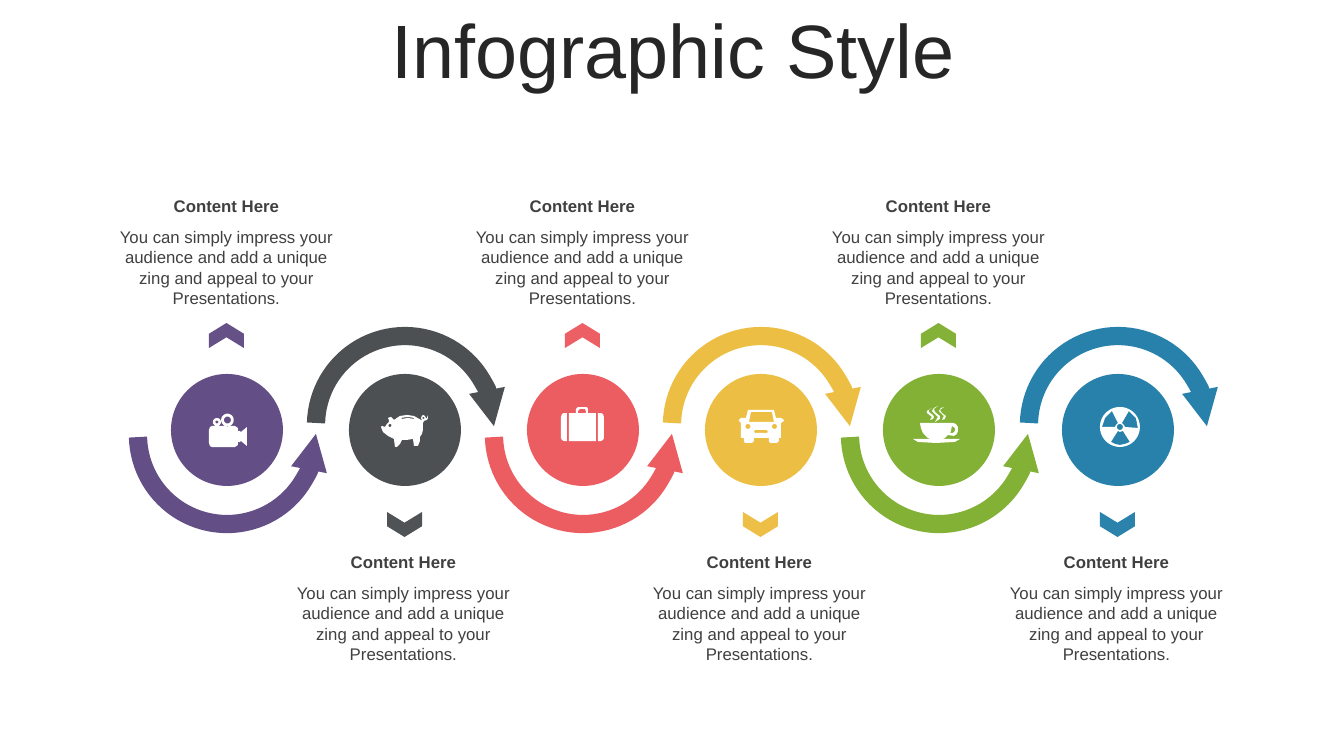
from math import cos, sin, tau

from lxml import etree
from pptx import Presentation
from pptx.dml.color import RGBColor
from pptx.enum.shapes import MSO_SHAPE
from pptx.enum.text import MSO_ANCHOR, MSO_AUTO_SIZE, PP_ALIGN
from pptx.oxml.ns import qn
from pptx.util import Pt

ARC, OVAL, CHEVRON = MSO_SHAPE.ARC, MSO_SHAPE.OVAL, MSO_SHAPE.CHEVRON
CENTER, MIDDLE = PP_ALIGN.CENTER, MSO_ANCHOR.MIDDLE
GROW, FIXED = MSO_AUTO_SIZE.SHAPE_TO_FIT_TEXT, MSO_AUTO_SIZE.NONE

PX = 914400 / 100.8
THEME = {
    "font": "Arial", "title": "262626", "text": "404040", "icon": "FFFFFF",
    "big": 54, "small": 12, "stroke": 13,
    "steps": ["634E85", "4C5053", "EC5D62", "EDBE44", "82B135", "2781AB"],
}
HEAD = "Content Here"
BODY = ("You can simply impress your audience and add a unique "
        "zing and appeal to your Presentations.")


def emu(*sizes):
    return [round(size * PX) for size in sizes]


def disc(x, y, r):
    return [(x + r * cos(tau * k / 40), y + r * sin(tau * k / 40))
            for k in range(40)]


# Icons: left, top, outlines in px from there; an inner outline is a hole
CAMERA = (209, 414, [
    disc(18.5, 6, 6.3), disc(18.5, 6, 3.5), disc(8, 8, 4), disc(8, 8, 1.5),
    [(0, 16), (1, 13), (3, 12), (26, 12), (29, 14), (29, 17), (31, 17),
     (32, 18), (38, 13), (38, 32), (32, 27), (31, 28), (29, 28), (29, 31),
     (26, 33), (3, 33), (1, 32), (0, 29)],
])
PIG = (381, 415, [
    [(26, 0), (33, 1), (40, 5), (41, 6), (41, 5), (40, 3), (41, 1), (42, 0),
     (44, 1), (45, 3), (44, 4), (46, 3), (47, 0), (47, 3), (46, 5), (43, 6),
     (42, 8), (42, 15), (41, 19), (39, 22), (39, 26), (37, 31), (33, 31),
     (32, 24), (26, 25), (21, 25), (19, 29), (16, 32), (14, 32), (13, 24),
     (7, 21), (2, 17), (0, 12), (1, 11), (4, 12), (6, 9), (8, 7), (8, 5),
     (7, 3), (10, 2), (13, 5), (19, 1)],
    disc(9, 10.5, 1.5), disc(42.5, 3, 1),
    [(20, 3), (27, 2), (33, 3), (33, 4), (27, 3), (21, 4)],
])
CASE = (561, 407, [
    [(37, 6), (40, 6), (42, 7), (43, 10), (43, 31), (42, 33), (40, 34),
     (37, 34)],
    [(3, 6), (6, 6), (6, 34), (3, 34), (1, 33), (0, 31), (0, 10), (1, 7)],
    [(17, 0), (26, 0), (27, 2), (27, 6), (35, 6), (35, 34), (8, 34), (8, 6),
     (15, 6), (15, 2)],
    [(17, 6), (17, 4), (19, 2), (24, 2), (25, 4), (25, 6)],
])
CAR = (739, 410, [
    [(9, 0), (35, 0), (37, 8), (42, 8), (45, 10), (45, 11), (42, 13),
     (42, 28), (40, 28), (40, 31), (38, 33), (31, 33), (30, 31), (30, 28),
     (15, 28), (15, 31), (13, 33), (6, 33), (5, 31), (5, 28), (2, 28),
     (2, 13), (0, 11), (0, 10), (2, 8), (7, 8)],
    [(12, 2), (10, 12), (35, 12), (33, 2)],
    [(16, 20), (28, 20), (29, 22), (28, 23), (16, 23), (15, 22)],
    disc(9, 16.5, 2.5), disc(35.5, 16.5, 2.5),
])
CUP = (913, 406, [
    [(7, 17), (40, 17), (43, 18), (45, 21), (45, 25), (44, 28), (41, 30),
     (35, 29), (32, 32), (29, 33), (47, 33), (42, 36), (23, 37), (5, 36),
     (0, 33), (18, 33), (15, 32), (10, 27), (8, 22)],
    [(39, 20), (38, 25), (37, 27), (40, 27), (42, 25), (42, 22)],
    [(19, 2), (16, 4), (16, 6), (20, 9), (21, 11), (20, 13), (17, 14),
     (19, 11), (14, 7), (14, 5)],
    [(25, 0), (21, 3), (22, 6), (27, 10), (27, 13), (22, 16), (25, 11),
     (19, 5), (21, 2)],
    [(31, 1), (27, 4), (29, 7), (33, 10), (32, 13), (29, 14), (31, 10),
     (26, 5), (28, 2)],
])
HAZARD = (1100, 407, [
    disc(20, 20, 20), disc(20, 20, 3),
    [(18, 24), (11, 35), (15, 37), (20, 38), (25, 37), (30, 35), (23, 24),
     (20, 25)],
    [(29, 4), (22, 16), (24, 18), (25, 20), (38, 21), (36, 11)],
    [(12, 4), (5, 11), (2, 20), (15, 20), (16, 18), (18, 16)],
])
ICONS = [CAMERA, PIG, CASE, CAR, CUP, HAZARD]

deck = Presentation()
deck.slide_width, deck.slide_height = emu(1344, 756)
slide = deck.slides.add_slide(deck.slide_layouts[5])
shapes = slide.shapes

# Title
title = shapes.title
title.left, title.top, title.width, title.height = emu(35, 14, 1276, 80)
frame = title.text_frame
frame.auto_size, frame.vertical_anchor = FIXED, MIDDLE
para = frame.paragraphs[0]
para.alignment, para.line_spacing, para.space_before = CENTER, 0.9, Pt(10)
run = para.add_run()
run.text = "Infographic Style"
run.font.name, run.font.size = THEME["font"], Pt(THEME["big"])
run.font.color.rgb = RGBColor.from_string(THEME["title"])

for i, (code, icon) in enumerate(zip(THEME["steps"], ICONS)):
    color = RGBColor.from_string(code)
    mid = 227 + 891 * i // 5
    low = i % 2 == 1  # odd steps arch over the disc, with text below

    # Curved arrow
    arc = shapes.add_shape(ARC, *emu(mid - 89, 336 if low else 346, 178, 178))
    arc.adjustments[0], arc.adjustments[1] = 54.79, 162.43
    arc.rotation = 270 if low else 90
    arc.shadow.inherit = False
    arc.fill.background()
    arc.line.color.rgb, arc.line.width = color, Pt(THEME["stroke"])
    frame = arc._element.spPr.find(qn("a:xfrm"))
    frame.set("flipH", "1")
    if low:
        frame.set("flipV", "1")
    line = arc._element.spPr.find(qn("a:ln"))
    etree.SubElement(line, qn("a:tailEnd"), type="triangle", w="sm", len="sm")

    # Disc and chevron
    ball = shapes.add_shape(OVAL, *emu(mid - 56, 374, 112, 112))
    mark = shapes.add_shape(
        CHEVRON, *emu(mid - 13, 507 if low else 318, 25, 35))
    mark.rotation = 90 if low else 270
    mark.adjustments[0] = 0.43
    for shape in (ball, mark):
        shape.shadow.inherit = False
        shape.fill.solid()
        shape.fill.fore_color.rgb = color
        shape.line.fill.background()
    tint = mark._element.spPr.find(qn("a:solidFill"))[0]
    etree.SubElement(tint, qn("a:alpha"), val="98000")

    # Icon
    left, top, parts = icon
    pen = None
    for part in parts:
        dots = [emu(left + x, top + y) for x, y in part]
        if pen is None:
            pen = shapes.build_freeform(*dots[0], scale=1.0)
        else:
            pen.move_to(*dots[0])
        pen.add_line_segments(dots[1:], close=True)
    sign = pen.convert_to_shape()
    sign.shadow.inherit = False
    sign.fill.solid()
    sign.fill.fore_color.rgb = RGBColor.from_string(THEME["icon"])
    sign.line.fill.background()

    # Heading and text
    edge = mid - (121 if low else 120)
    base = 547 if low else 191
    for words, drop, tall, bold in ((HEAD, 0, 30, True), (BODY, 31, 92, False)):
        box = shapes.add_textbox(*emu(edge, base + drop, 239, tall))
        frame = box.text_frame
        frame.word_wrap, frame.auto_size = True, GROW
        para = frame.paragraphs[0]
        para.alignment = CENTER
        run = para.add_run()
        run.text = words
        run.font.name, run.font.size = THEME["font"], Pt(THEME["small"])
        run.font.bold = bold
        run.font.color.rgb = RGBColor.from_string(THEME["text"])

deck.save("out.pptx")
